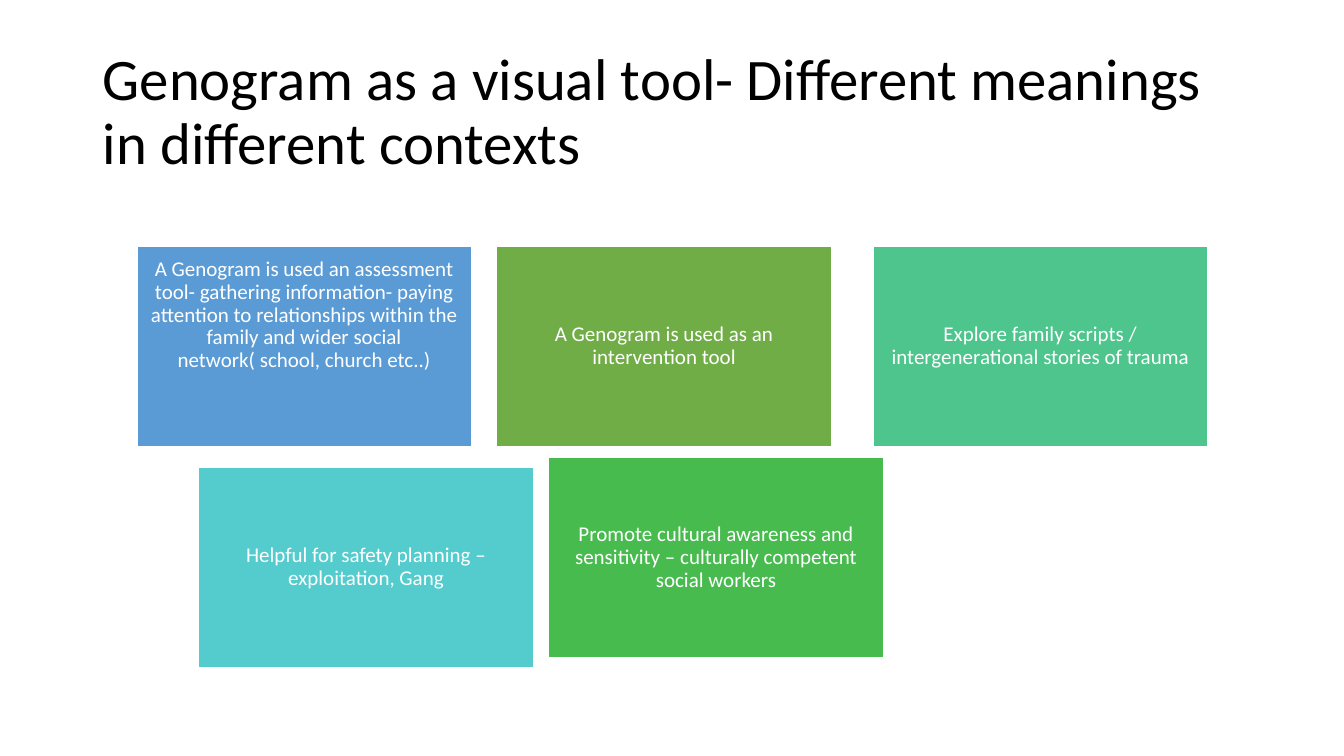
from dataclasses import dataclass

from pptx import Presentation
from pptx.dml.color import RGBColor
from pptx.enum.shapes import MSO_SHAPE
from pptx.enum.text import MSO_ANCHOR, MSO_AUTO_SIZE, PP_ALIGN
from pptx.util import Cm, Pt

RECTANGLE = MSO_SHAPE.RECTANGLE
MIDDLE = MSO_ANCHOR.MIDDLE
NO_AUTOFIT = MSO_AUTO_SIZE.NONE
LEFT, CENTER = PP_ALIGN.LEFT, PP_ALIGN.CENTER
TITLE_ONLY = 5


@dataclass(frozen=True)
class Theme:
    font: str = "Calibri"
    title_size: int = 42
    card_size: int = 15
    black: str = "000000"
    white: str = "FFFFFF"
    blue: str = "5B9BD5"
    olive: str = "70AD47"
    mint: str = "4DC58D"
    turquoise: str = "54CCCD"
    green: str = "48BB4F"


THEME = Theme()
TITLE = "Genogram as a visual tool- Different meanings in different contexts"
TITLE_BOX = (2.34, 1.02, 29.21, 3.68)
CARDS_BOX = (3.45, 6.2, 26.98, 10.62)
CARD_WIDTH, CARD_HEIGHT = 8.43, 5.06
CARD_INSET = 0.15

# Each card: offset from the box (cm), fill, wording, extra space under the text (cm)
CARDS = [
    (0, 0, THEME.blue,
     "A Genogram is used an assessment tool- gathering information- paying attention "
     "to relationships within the family and wider social network( school, church etc..)",
     1.57),
    (9.07, 0, THEME.olive, "A Genogram is used as an intervention tool", 0),
    (18.55, 0, THEME.mint,
     "Explore family scripts / intergenerational stories of trauma", 0),
    (1.56, 5.57, THEME.turquoise, "Helpful for safety planning – exploitation, Gang", 0),
    (10.38, 5.32, THEME.green,
     "Promote cultural awareness and sensitivity – culturally competent social workers", 0),
]


def write_text(shape, text, *, size, color, align, insets):
    frame = shape.text_frame
    frame.word_wrap = True
    frame.auto_size = NO_AUTOFIT
    frame.vertical_anchor = MIDDLE
    frame.margin_left, frame.margin_top, frame.margin_right, frame.margin_bottom = map(Cm, insets)
    para = frame.paragraphs[0]
    para.alignment = align
    para.line_spacing = 0.9
    para.space_before = para.space_after = Pt(0)
    span = para.add_run()
    span.text = text
    span.font.name = THEME.font
    span.font.size = Pt(size)
    span.font.color.rgb = RGBColor.from_string(color)


def add_title(page, box):
    title = page.shapes.title
    title.left, title.top, title.width, title.height = map(Cm, box)
    write_text(title, TITLE, size=THEME.title_size, color=THEME.black,
               align=LEFT, insets=(0.25, 0.13, 0.25, 0.13))


def add_card(page, box, fill, text, space_below):
    card = page.shapes.add_shape(RECTANGLE, *map(Cm, box))
    card.shadow.inherit = False
    card.fill.solid()
    card.fill.fore_color.rgb = RGBColor.from_string(fill)
    card.line.color.rgb = RGBColor.from_string(THEME.white)
    card.line.width = Pt(1)
    write_text(card, text, size=THEME.card_size, color=THEME.white, align=CENTER,
               insets=(CARD_INSET, CARD_INSET, CARD_INSET, CARD_INSET + space_below))


def add_cards(page, box):
    left, top = box[:2]
    for across, down, fill, text, space_below in CARDS:
        card_box = (left + across, top + down, CARD_WIDTH, CARD_HEIGHT)
        add_card(page, card_box, fill, text, space_below)


def main():
    deck = Presentation()
    deck.slide_width, deck.slide_height = Cm(33.87), Cm(19.05)
    page = deck.slides.add_slide(deck.slide_layouts[TITLE_ONLY])
    add_title(page, TITLE_BOX)
    add_cards(page, CARDS_BOX)
    deck.save("out.pptx")


if __name__ == "__main__":
    main()
